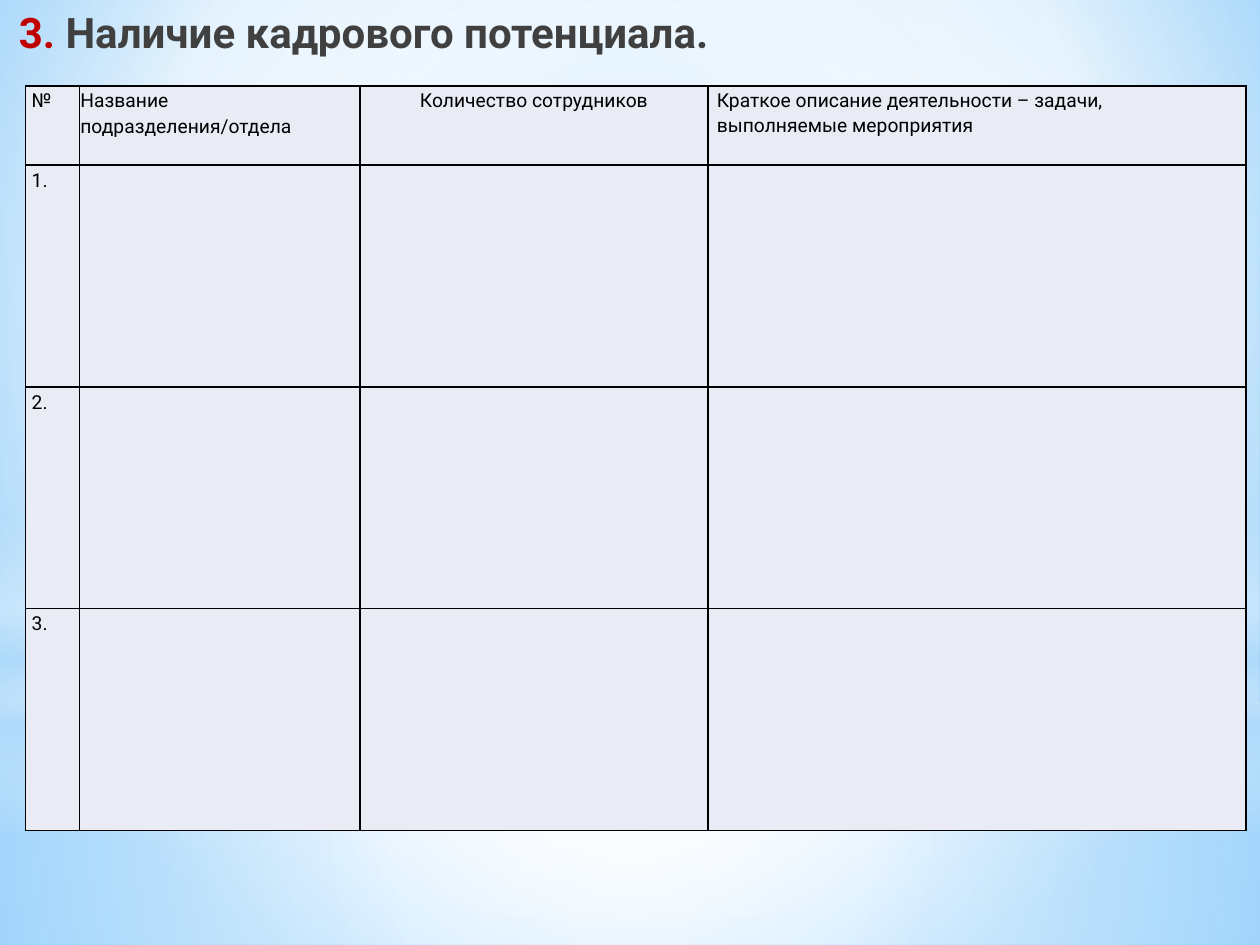
from pptx import Presentation
from pptx.dml.color import RGBColor
from pptx.enum.shapes import MSO_SHAPE as Kind
from pptx.enum.text import MSO_ANCHOR as Anchor, PP_ALIGN as Align
from pptx.oxml import parse_xml
from pptx.oxml.ns import nsdecls, qn
from pptx.util import Cm, Pt

FONT = "Roboto"
CENTER = (50, 50, 50, 50)
WHITE, SKY = "FFFFFF", "B4DCFA"


def color(code):
    return RGBColor.from_string(code)


def assign(item, values):
    for name, value in values.items():
        setattr(item, name, value)


def gradient(stops, focus=None):
    """Stops are (position, colour, opacity); without a focus it runs downwards."""
    marks = "".join(
        f'<a:gs pos="{pos * 1000}"><a:srgbClr val="{color(code)}">'
        f'<a:alpha val="{alpha * 1000}"/></a:srgbClr></a:gs>'
        for pos, code, alpha in stops)
    if focus:
        sides = " ".join(f'{side}="{part * 1000}"' for side, part in zip("ltrb", focus))
        way = f'<a:path path="circle"><a:fillToRect {sides}/></a:path>'
    else:
        way = '<a:lin ang="5400000" scaled="0"/>'
    return parse_xml(f'<a:gradFill {nsdecls("a")} rotWithShape="1">'
                     f'<a:gsLst>{marks}</a:gsLst>{way}</a:gradFill>')


def swap_fill(holder, grad):
    solid = holder.find(qn("a:solidFill"))
    holder.replace(solid, grad)


def add_back(slide, stops, focus):
    slide.background.fill.solid()
    swap_fill(next(slide.element.iter(qn("p:bgPr"))), gradient(stops, focus))


def add_glow(slide, kind, top, height, stops, focus=CENTER):
    shape = slide.shapes.add_shape(kind, 0, Cm(top), Cm(25.4), Cm(height))
    shape.shadow.inherit = False
    shape.line.fill.background()
    shape.fill.solid()
    swap_fill(shape.element.spPr, gradient(stops, focus))


def add_run(para, text, size, code, bold=False):
    run = para.add_run()
    run.text = text
    assign(run.font, {"name": FONT, "size": Pt(size), "bold": bold})
    run.font.color.rgb = color(code)


def add_title(slide, number, text):
    frame = slide.shapes.add_textbox(0, 0, Cm(25.4), Cm(19.05)).text_frame
    assign(frame, {"word_wrap": True, "vertical_anchor": Anchor.TOP,
                   "margin_left": Cm(0.38)})
    para = frame.paragraphs[0]
    assign(para, {"space_before": Pt(4.8), "space_after": Pt(3)})
    add_run(para, number, 24, "C00000", True)
    add_run(para, text, 24, "404040", True)


def add_border(cell):
    props = cell._tc.get_or_add_tcPr()
    for place, side in enumerate("LRTB"):
        props.insert(place, parse_xml(
            f'<a:ln{side} {nsdecls("a")} w="{Pt(1)}"><a:solidFill>'
            f'<a:srgbClr val="{color("000000")}"/></a:solidFill></a:ln{side}>'))


def fill_cell(cell, text, align, sides, ends):
    cell.fill.solid()
    cell.fill.fore_color.rgb = color("E9EBF5")
    add_border(cell)
    assign(cell, {"margin_left": Cm(sides), "margin_right": Cm(min(sides, 0.18)),
                  "margin_top": Cm(ends), "margin_bottom": Cm(ends)})
    para = cell.text_frame.paragraphs[0]
    assign(para, {"alignment": align, "line_spacing": 1.15})
    if text:
        add_run(para, text, 11, "000000")


def add_grid(slide, rows, cols, heights):
    frame = slide.shapes.add_table(len(rows), len(cols), Cm(0.51), Cm(1.73),
                                   Cm(sum(col[0] for col in cols)), Cm(sum(heights)))
    table = frame.table
    assign(table, {"first_row": False, "horz_banding": False})
    for row, height in zip(table.rows, heights):
        row.height = Cm(height)
    for x, (width, *style) in enumerate(cols):
        table.columns[x].width = Cm(width)
        for y, row in enumerate(rows):
            fill_cell(table.cell(y, x), row[x], *style)


def main():
    deck = Presentation()
    assign(deck, {"slide_width": Cm(25.4), "slide_height": Cm(19.05)})
    slide = deck.slides.add_slide(deck.slide_layouts[6])

    # Sky background and its glows
    add_back(slide, [(0, "9ED5FF", 100), (60, WHITE, 100), (100, "5BB9FF", 100)],
             (20, 10, 20, 60))
    add_glow(slide, Kind.RECTANGLE, 14.17, 4.88,
             [(0, WHITE, 91), (37, WHITE, 76), (100, SKY, 79)])
    add_glow(slide, Kind.RECTANGLE, 0, 14.17,
             [(0, WHITE, 89), (48, WHITE, 62), (100, SKY, 79)])
    add_glow(slide, Kind.RECTANGLE, 10.46, 6.35,
             [(0, WHITE, 0), (29, WHITE, 30), (45, SKY, 40),
              (55, WHITE, 26), (65, SKY, 60), (100, WHITE, 0)], None)
    add_glow(slide, Kind.OVAL, 4.45, 14.17, [(0, WHITE, 100), (56, WHITE, 0)])

    # Heading
    add_title(slide, "3. ", "Наличие кадрового потенциала.")

    # Staff table: each column has width, alignment, side and end margins
    cols = [(1.09, Align.LEFT, 0.13, 0.02), (5.66, Align.LEFT, 0.02, 0.02),
            (7.01, Align.CENTER, 0.02, 0.02), (10.85, Align.LEFT, 0.18, 0)]
    head = ["№", "Название подразделения/отдела", "Количество сотрудников",
            "Краткое описание деятельности – задачи, выполняемые мероприятия"]
    rows = [head] + [[f"{num}.", "", "", ""] for num in range(1, 4)]
    add_grid(slide, rows, cols, [1.6] + [4.47] * 3)

    deck.save("out.pptx")


if __name__ == "__main__":
    main()
